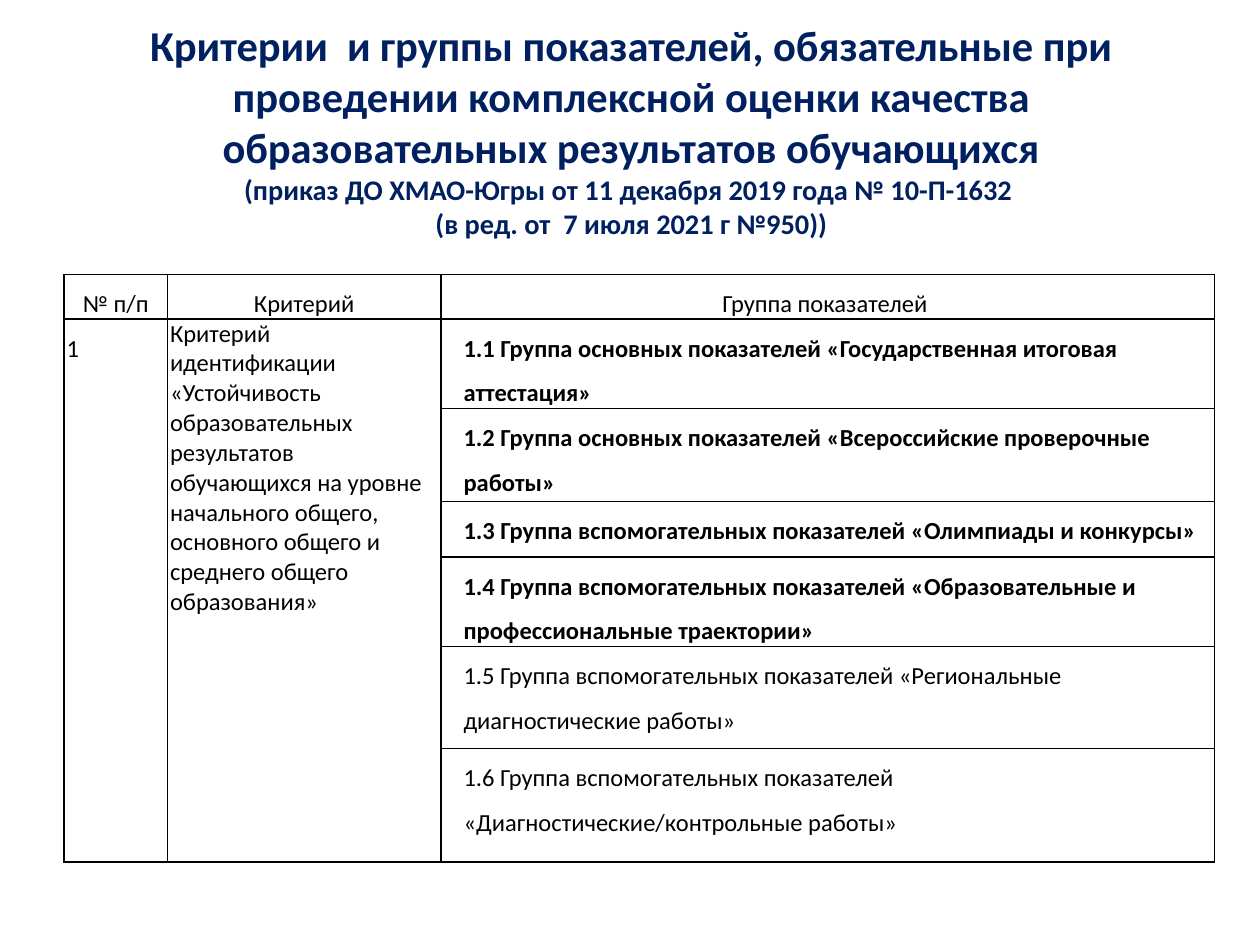
from lxml import etree
from pptx import Presentation
from pptx.dml.color import RGBColor
from pptx.enum.text import MSO_ANCHOR, PP_ALIGN
from pptx.oxml.ns import qn
from pptx.util import Inches, Pt

MIDDLE = MSO_ANCHOR.MIDDLE
TOP = MSO_ANCHOR.TOP
CENTER = PP_ALIGN.CENTER
LEFT = PP_ALIGN.LEFT
COLORS = {"title": "002060", "text": "000000", "border": "000000"}


def add_span(para, text, size, color, bold):
    span = para.add_run()
    span.text = text
    values = {"name": "Calibri", "size": Pt(size), "bold": bold}
    for name, value in values.items():
        setattr(span.font, name, value)
    span.font.color.rgb = RGBColor.from_string(COLORS[color])


def fill_cell(cell, text, align=LEFT, spacing=1.5, indent=0, bold=False):
    values = {
        "margin_left": Inches(0.02),
        "margin_right": Inches(0.02),
        "margin_top": 0,
        "margin_bottom": 0,
        "vertical_anchor": TOP,
    }
    for name, value in values.items():
        setattr(cell, name, value)
    para = cell.text_frame.paragraphs[0]
    para.alignment = align
    para.line_spacing = spacing
    if indent:
        props = para._p.get_or_add_pPr()
        props.set("marL", str(Inches(indent)))
        props.set("indent", "0")
    add_span(para, text, 14, "text", bold)


deck = Presentation()
deck.slide_width = Inches(10)
deck.slide_height = Inches(7.5)
page = deck.slides.add_slide(deck.slide_layouts[6])

box = page.shapes.add_textbox(Inches(0.51), Inches(0.36), Inches(9), Inches(1.34))
frame = box.text_frame
frame.word_wrap = True
frame.vertical_anchor = MIDDLE
title = frame.paragraphs[0]
title.alignment = CENTER
title_lines = [
    ("Критерии  и группы показателей, обязательные при проведении "
     "комплексной оценки качества образовательных результатов обучающихся", 24.3),
    ("(приказ ДО ХМАО-Югры от 11 декабря 2019 года № 10-П-1632 ", 16.2),
    ("(в ред. от  7 июля 2021 г №950))", 16.2),
]
for index, (text, size) in enumerate(title_lines):
    if index:
        title.add_line_break()
    add_span(title, text, size, "title", True)

headers = ["№ п/п", "Критерий", "Группа показателей "]
criterion = (
    "Критерий идентификации «Устойчивость образовательных результатов "
    "обучающихся на уровне начального общего, основного общего и среднего "
    "общего образования»"
)
groups = [
    ("1.1 Группа основных показателей «Государственная итоговая аттестация»", True),
    ("1.2 Группа основных показателей «Всероссийские проверочные работы»", True),
    ("1.3 Группа вспомогательных показателей «Олимпиады и конкурсы»", True),
    ("1.4 Группа вспомогательных показателей «Образовательные и "
     "профессиональные траектории»", True),
    ("1.5 Группа вспомогательных показателей «Региональные "
     "диагностические работы»", False),
    ("1.6 Группа вспомогательных показателей «Диагностические/контрольные "
     "работы»", False),
]
column_widths = [0.82, 2.17, 6.14]
row_heights = [0.31, 0.71, 0.74, 0.44, 0.71, 0.81, 0.9]

table = page.shapes.add_table(
    len(row_heights), len(column_widths), Inches(0.51), Inches(2.18),
    Inches(sum(column_widths)), Inches(sum(row_heights)),
).table
table.first_row = False
table.horz_banding = False
for column, width in zip(table.columns, column_widths):
    column.width = Inches(width)
for row, height in zip(table.rows, row_heights):
    row.height = Inches(height)

for column in range(2):
    table.cell(1, column).merge(table.cell(len(groups), column))
for column, header in enumerate(headers):
    fill_cell(table.cell(0, column), header, align=CENTER)
fill_cell(table.cell(1, 0), "1")
fill_cell(table.cell(1, 1), criterion, spacing=1.0)
for row, (text, bold) in enumerate(groups, start=1):
    fill_cell(table.cell(row, 2), text, indent=0.16, bold=bold)

for cell in table.iter_cells():
    props = cell._tc.get_or_add_tcPr()
    for side in ("a:lnL", "a:lnR", "a:lnT", "a:lnB"):
        line = etree.SubElement(props, qn(side), w=str(Pt(1)))
        solid = etree.SubElement(line, qn("a:solidFill"))
        etree.SubElement(solid, qn("a:srgbClr"), val=COLORS["border"])
    cell.fill.background()

deck.save("out.pptx")
